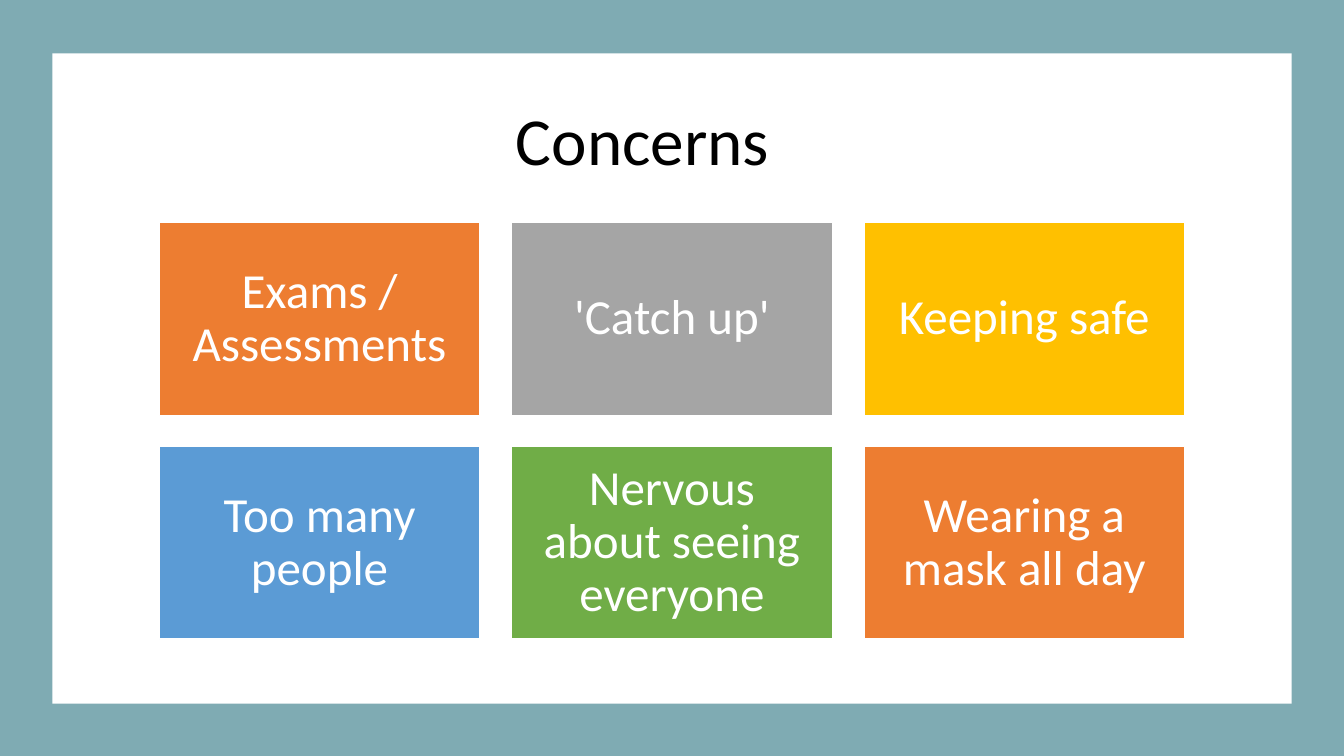
from pptx import Presentation
from pptx.dml.color import RGBColor
from pptx.enum.shapes import MSO_SHAPE
from pptx.enum.text import MSO_ANCHOR, PP_ALIGN
from pptx.util import Inches, Pt

TEAL = RGBColor(0x7F, 0xAB, 0xB3)
WHITE = RGBColor(0xFF, 0xFF, 0xFF)
BLACK = RGBColor(0, 0, 0)
ORANGE = RGBColor(0xED, 0x7D, 0x31)
GREY = RGBColor(0xA5, 0xA5, 0xA5)
GOLD = RGBColor(0xFF, 0xC0, 0x00)
BLUE = RGBColor(0x5B, 0x9B, 0xD5)
GREEN = RGBColor(0x70, 0xAD, 0x47)

deck = Presentation()
deck.slide_width, deck.slide_height = Inches(13.33), Inches(7.5)
slide = deck.slides.add_slide(deck.slide_layouts[5])


def add_box(left, top, width, height, fill):
    box = slide.shapes.add_shape(
        MSO_SHAPE.RECTANGLE, Inches(left), Inches(top), Inches(width), Inches(height))
    box.shadow.inherit = False
    box.fill.solid()
    box.fill.fore_color.rgb = fill
    box.line.fill.background()
    return box


def set_text(shape, words, size, color, anchor):
    frame = shape.text_frame
    frame.text = words
    frame.word_wrap = True
    frame.vertical_anchor = anchor
    para = frame.paragraphs[0]
    para.alignment = PP_ALIGN.CENTER
    para.line_spacing = 0.9
    font = para.runs[0].font
    font.name, font.size, font.color.rgb = "Calibri", Pt(size), color


# Teal frame and white panel
add_box(0, 0, 13.33, 7.5, TEAL)
add_box(0.52, 0.53, 12.29, 6.45, WHITE)

# Title, brought in front of the panel
title = slide.shapes.title
title.left, title.top = Inches(0.87), Inches(0.42)
title.width, title.height = Inches(11.01), Inches(1.42)
set_text(title, "Concerns", 48, BLACK, MSO_ANCHOR.BOTTOM)
slide.shapes._spTree.append(title._element)

# Grid of concerns, three to a row
concerns = [
    ("Exams / Assessments", ORANGE),
    ("'Catch up'", GREY),
    ("Keeping safe", GOLD),
    ("Too many people", BLUE),
    ("Nervous about seeing everyone", GREEN),
    ("Wearing a mask all day", ORANGE),
]
for i, (words, fill) in enumerate(concerns):
    row, col = divmod(i, 3)
    card = add_box(1.58 + col * 3.495, 2.21 + row * 2.22, 3.18, 1.91, fill)
    card.line.color.rgb = WHITE
    card.line.width = Pt(1)
    set_text(card, words, 35, WHITE, MSO_ANCHOR.MIDDLE)
    frame = card.text_frame
    frame.margin_left = frame.margin_right = Inches(0.15)
    frame.margin_top = frame.margin_bottom = Inches(0.15)

deck.save("out.pptx")
